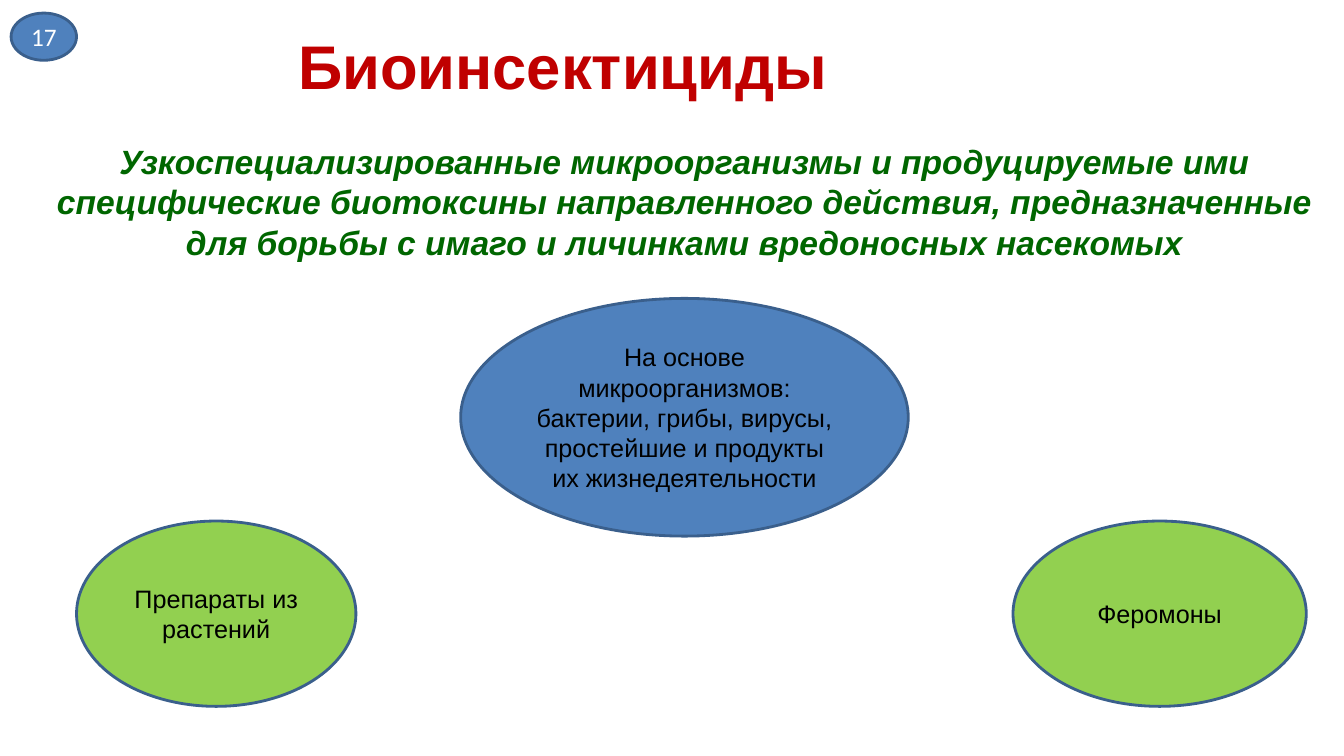
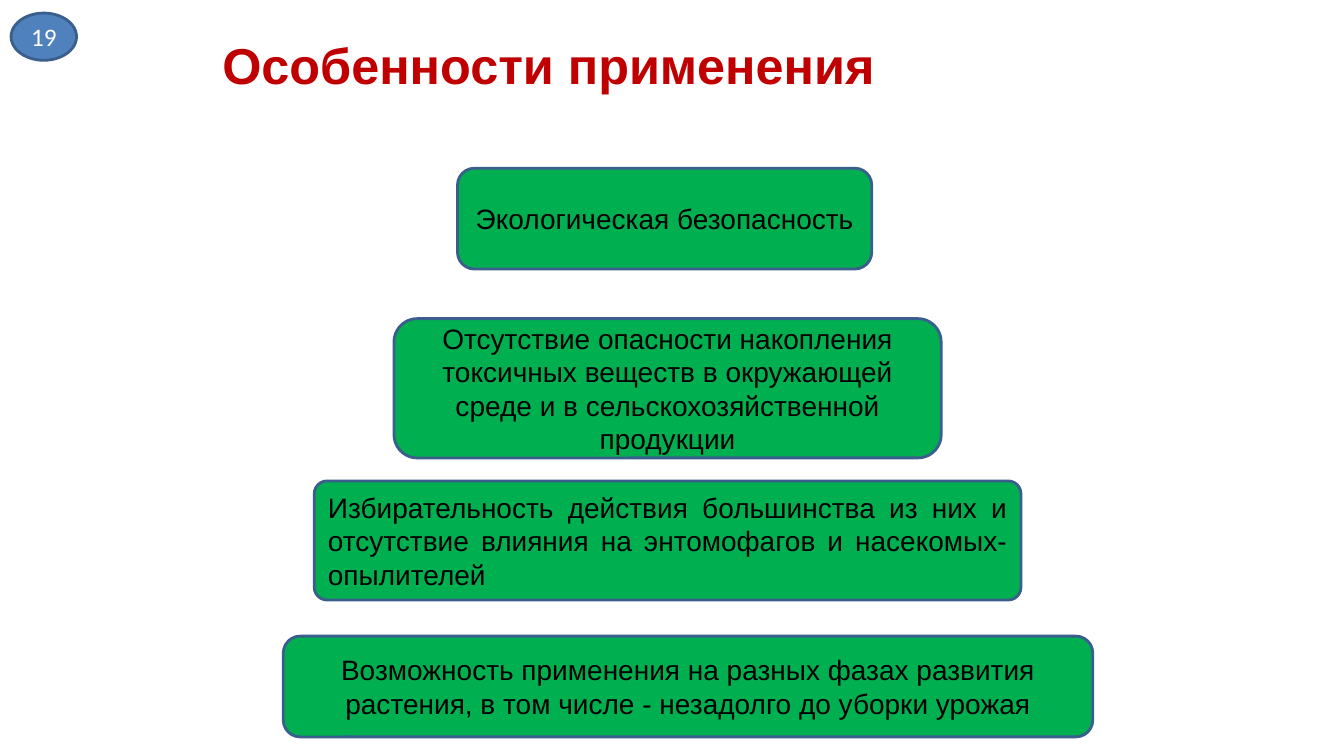
import pptx
import pptx.dml.color
import pptx.enum.shapes
import pptx.enum.text
import pptx.util
from dataclasses import dataclass

Cm = pptx.util.Cm
Pt = pptx.util.Pt
RGBColor = pptx.dml.color.RGBColor
SHAPE = pptx.enum.shapes.MSO_SHAPE
ALIGN = pptx.enum.text.PP_ALIGN
ANCHOR = pptx.enum.text.MSO_ANCHOR

RED = RGBColor(0xC0, 0x00, 0x00)
DARK_GREEN = RGBColor(0x00, 0x66, 0x00)
BLUE = RGBColor(0x4F, 0x81, 0xBD)
OUTLINE = RGBColor(0x3A, 0x5F, 0x8C)
LIGHT_GREEN = RGBColor(0x92, 0xD0, 0x50)
GREEN = RGBColor(0x00, 0xB0, 0x50)
BLACK = RGBColor(0x00, 0x00, 0x00)
WHITE = RGBColor(0xFF, 0xFF, 0xFF)

TITLE_ONLY = 5


@dataclass
class Box:
    """A rectangle in centimetres."""
    left: float
    top: float
    width: float
    height: float

    def inner(self, left, top, width, height):
        return Box(self.left + left, self.top + top, width, height)

    def lengths(self):
        return [Cm(value) for value in (self.left, self.top, self.width, self.height)]


BADGE_BOX = Box(0.28, 0.33, 1.65, 1.19)


def write(frame, text, size, color, font="Arial", align=ALIGN.CENTER,
          bold=False, italic=False):
    frame.word_wrap = True
    frame.auto_size = pptx.enum.text.MSO_AUTO_SIZE.NONE
    frame.text = text
    paragraph = frame.paragraphs[0]
    paragraph.alignment = align
    paragraph.font.name = font
    paragraph.font.size = Pt(size)
    paragraph.font.bold = bold
    paragraph.font.italic = italic
    paragraph.font.color.rgb = color


def add_panel(page, kind, box, fill, text, size, color=BLACK, **style):
    """Draw an outlined shape with its text in the middle."""
    panel = page.shapes.add_shape(kind, *box.lengths())
    panel.shadow.inherit = False
    panel.fill.solid()
    panel.fill.fore_color.rgb = fill
    panel.line.color.rgb = OUTLINE
    panel.line.width = Pt(2)
    panel.text_frame.vertical_anchor = ANCHOR.MIDDLE
    write(panel.text_frame, text, size, color, **style)
    return panel


def add_page(deck, number, title, title_box, title_size):
    """Add a slide with its title and numbered badge."""
    page = deck.slides.add_slide(deck.slide_layouts[TITLE_ONLY])
    heading = page.shapes.title
    heading.left, heading.top, heading.width, heading.height = title_box.lengths()
    heading.text_frame.vertical_anchor = ANCHOR.MIDDLE
    write(heading.text_frame, title, title_size, RED, bold=True)

    badge = add_panel(page, SHAPE.OVAL, BADGE_BOX, BLUE, str(number), 18, WHITE,
                      font="Calibri")
    badge.text_frame.margin_left = badge.text_frame.margin_right = 0
    return page


def add_definition(page, box, text):
    definition = page.shapes.add_textbox(*box.lengths())
    write(definition.text_frame, text, 24, DARK_GREEN, bold=True, italic=True)


def add_groups(page, box):
    """Place one oval at the top and two in the lower corners of the box."""
    side_height = 4.67
    side_top = box.height - side_height
    left_width, right_width = 7.04, 7.39
    ovals = [
        (box.inner(9.68, 0, 11.28, 5.99), BLUE,
         "На основе микроорганизмов: бактерии, грибы, вирусы, "
         "простейшие и продукты их жизнедеятельности"),
        (box.inner(0, side_top, left_width, side_height), LIGHT_GREEN,
         "Препараты из растений"),
        (box.inner(box.width - right_width, side_top, right_width, side_height),
         LIGHT_GREEN, "Феромоны"),
    ]
    for oval_box, fill, text in ovals:
        add_panel(page, SHAPE.OVAL, oval_box, fill, text, 18)


def add_pyramid(page, box):
    """Stack the features in steps that widen downwards."""
    steps = [
        (box.inner(4.39, 0, 10.44, 2.54), ALIGN.CENTER, 0.167,
         "Экологическая безопасность"),
        (box.inner(2.79, 3.79, 13.79, 3.51), ALIGN.CENTER, 0.167,
         "Отсутствие опасности накопления токсичных веществ в окружающей "
         "среде и в сельскохозяйственной продукции"),
        (box.inner(0.78, 7.88, 17.81, 3), ALIGN.JUSTIFY, 0.107,
         "Избирательность действия большинства из них и отсутствие влияния "
         "на энтомофагов и насекомых-опылителей"),
        (box.inner(0, 11.79, box.width, 2.54), ALIGN.CENTER, 0.167,
         "Возможность применения на разных фазах развития растения, "
         "в том числе - незадолго до уборки урожая"),
    ]
    for step_box, align, rounding, text in steps:
        step = add_panel(page, SHAPE.ROUNDED_RECTANGLE, step_box, GREEN, text, 20,
                         align=align)
        step.adjustments[0] = rounding


def build_insecticides(deck):
    page = add_page(deck, 17, "Биоинсектициды", Box(2.74, 0.33, 22.9, 2.59), 44)
    add_definition(
        page, Box(1.14, 3.43, 32.21, 3.8),
        "Узкоспециализированные микроорганизмы и продуцируемые ими "
        "специфические биотоксины направленного действия, предназначенные "
        "для борьбы с имаго и личинками вредоносных насекомых")
    add_groups(page, Box(1.93, 7.52, 30.99, 10.28))


def build_features(deck):
    page = add_page(deck, 19, "Особенности применения",
                    Box(4.72, 0.33, 18.21, 2.59), 36)
    add_pyramid(page, Box(7.14, 4.24, 20.4, 14.33))


def main():
    deck = pptx.Presentation()
    deck.slide_width = Cm(33.87)
    deck.slide_height = Cm(19.05)
    build_insecticides(deck)
    build_features(deck)
    deck.save("out.pptx")


if __name__ == "__main__":
    main()
